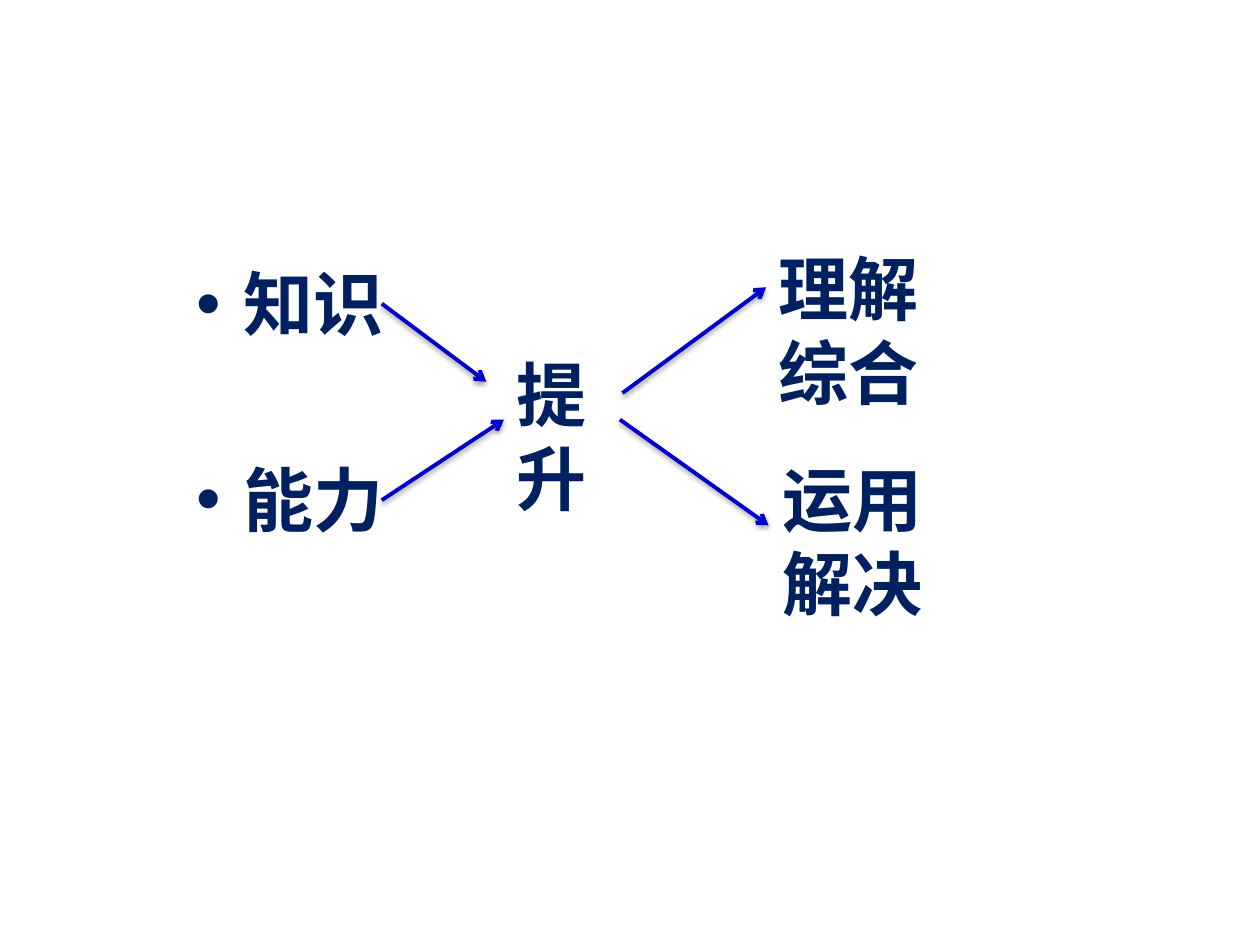
from dataclasses import dataclass

from lxml.etree import SubElement
from pptx import Presentation
from pptx.dml.color import RGBColor
from pptx.enum.shapes import MSO_CONNECTOR
from pptx.enum.text import MSO_AUTO_SIZE
from pptx.oxml.ns import qn
from pptx.slide import Slide
from pptx.text.text import TextFrame
from pptx.util import Inches, Pt

NAVY = "002060"
BLUE = "0000CC"


@dataclass(frozen=True)
class Label:
    lines: tuple[str, ...]
    left: float
    top: float
    width: float
    height: float = 1.45


@dataclass(frozen=True)
class Arrow:
    start: tuple[float, float]
    end: tuple[float, float]


INPUTS = Label(("知识", "能力"), 1.46, 2.02, 1.9, 2.44)
LABELS = (
    Label(("提升",), 4, 2.74, 1.25),
    Label(("理解", "综合"), 6.08, 1.9, 2.3),
    Label(("运用", "解决"), 6.11, 3.57, 2.31),
)
ARROWS = (
    Arrow((4.94, 3.12), (6.08, 2.28)),
    Arrow((3.03, 2.41), (3.86, 3.03)),
    Arrow((4.92, 3.33), (6.1, 4.17)),
    Arrow((3.03, 3.97), (4, 3.33)),
)


def color(value: str) -> RGBColor:
    return RGBColor.from_string(value)


def box(label: Label) -> tuple[Inches, ...]:
    return tuple(map(Inches, (label.left, label.top, label.width, label.height)))


def write_lines(frame: TextFrame, lines: tuple[str, ...], font_name: str) -> None:
    frame.text = "\n".join(lines)
    for paragraph in frame.paragraphs:
        font = paragraph.font
        font.name, font.size, font.bold = font_name, Pt(40), True
        font.color.rgb = color(NAVY)


def fill_inputs(slide: Slide) -> None:
    """Put the bulleted inputs in the body placeholder, one empty line apart."""
    body = slide.placeholders[1]
    body.left, body.top, body.width, body.height = box(INPUTS)
    write_lines(body.text_frame, INPUTS.lines, "Calibri")
    body.text_frame.paragraphs[1].space_before = Pt(64)


def add_label(slide: Slide, label: Label) -> None:
    frame = slide.shapes.add_textbox(*box(label)).text_frame
    frame.word_wrap = True
    frame.auto_size = MSO_AUTO_SIZE.SHAPE_TO_FIT_TEXT
    write_lines(frame, label.lines, "Arial")


def add_arrow(slide: Slide, arrow: Arrow) -> None:
    """Draw an open-headed arrow with a soft shadow below it."""
    connector = slide.shapes.add_connector(
        MSO_CONNECTOR.STRAIGHT, *map(Inches, arrow.start + arrow.end)
    )
    connector.line.color.rgb = color(BLUE)
    connector.line.width = Pt(2.25)
    properties = connector.element.spPr
    SubElement(properties.find(qn("a:ln")), qn("a:tailEnd"), type="arrow")
    effects = SubElement(properties, qn("a:effectLst"))
    shadow = SubElement(
        effects, qn("a:outerShdw"), blurRad=str(Pt(3.1)), dist=str(Pt(1.8)),
        dir="5400000", rotWithShape="0",
    )
    black = SubElement(shadow, qn("a:srgbClr"), val="000000")
    SubElement(black, qn("a:alpha"), val="35000")


def main() -> None:
    presentation = Presentation()
    presentation.slide_width, presentation.slide_height = Inches(10), Inches(7.5)
    slide = presentation.slides.add_slide(presentation.slide_layouts[1])
    title = slide.shapes.title.element
    title.getparent().remove(title)

    fill_inputs(slide)
    for label in LABELS:
        add_label(slide, label)
    for arrow in ARROWS:
        add_arrow(slide, arrow)
    presentation.save("out.pptx")


if __name__ == "__main__":
    main()
